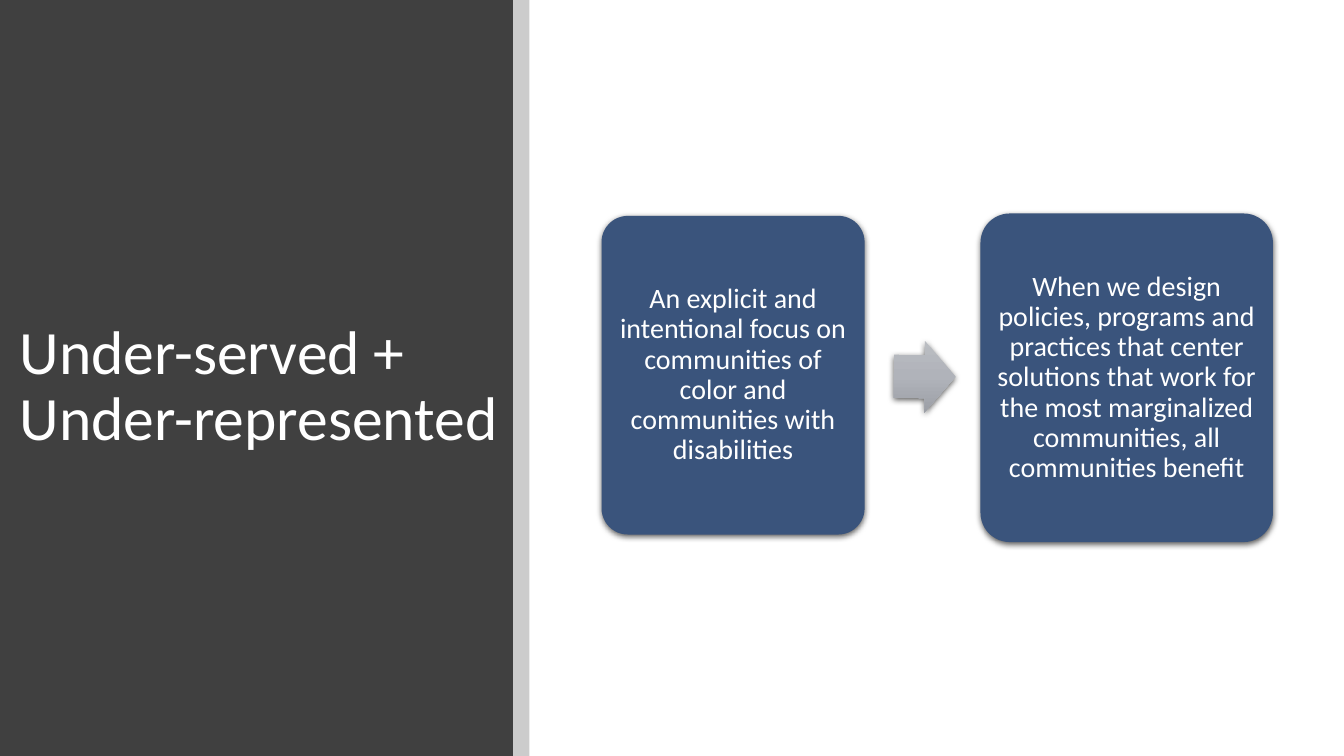
from dataclasses import dataclass

from pptx import Presentation
from pptx.dml.color import RGBColor
from pptx.enum.shapes import MSO_SHAPE as Preset
from pptx.enum.text import MSO_ANCHOR as Anchor, PP_ALIGN as Align
from pptx.oxml import parse_xml
from pptx.oxml.ns import nsdecls, qn
from pptx.shapes.autoshape import Shape
from pptx.slide import Slide
from pptx.text.text import TextFrame
from pptx.util import Cm, Pt

FONT = "Calibri"
COLORS = {
    "panel": "404040",
    "black": "000000",
    "card": "3A547C",
    "text": "FFFFFF",
}
ARROW_STOPS = {0: "BABDC2", 50: "B0B3BA", 100: "9C9FA6"}
SLIDE_WIDTH, SLIDE_HEIGHT = 33.87, 19.05
PANEL_WIDTH, STRIP_WIDTH = 12.93, 0.41


@dataclass(frozen=True)
class Box:
    left: float
    top: float
    width: float
    height: float

    def lengths(self) -> list[Cm]:
        return [Cm(value) for value in (self.left, self.top, self.width, self.height)]


@dataclass(frozen=True)
class Card:
    box: Box
    text: str


CARDS = [
    Card(
        Box(15.16, 5.44, 6.63, 8.03),
        "An explicit and intentional focus on communities of color "
        "and communities with disabilities",
    ),
    Card(
        Box(24.71, 5.38, 7.37, 8.28),
        "When we design policies, programs and practices that center solutions "
        "that work for the most marginalized communities, all communities benefit",
    ),
]


def add_plain_shape(slide: Slide, preset: Preset, box: Box, color: str) -> Shape:
    shape = slide.shapes.add_shape(preset, *box.lengths())
    shape.fill.solid()
    shape.fill.fore_color.rgb = RGBColor.from_string(COLORS[color])
    shape.line.fill.background()
    shape.shadow.inherit = False
    return shape


def add_shadow(shape: Shape) -> None:
    effects = shape.element.spPr.find(qn("a:effectLst"))
    effects.append(parse_xml(
        f'<a:outerShdw {nsdecls("a")} blurRad="{Pt(4.5)}" dist="{Pt(1.5)}" '
        f'dir="5400000" rotWithShape="0"><a:srgbClr val="{COLORS["black"]}">'
        '<a:alpha val="63000"/></a:srgbClr></a:outerShdw>'
    ))


def set_gradient(shape: Shape, stops: dict[int, str]) -> None:
    shape.fill.gradient()
    shape.fill.gradient_angle = 270
    gradient = shape.element.spPr.find(qn("a:gradFill"))
    stop_xml = "".join(
        f'<a:gs pos="{position * 1000}"><a:srgbClr val="{color}"/></a:gs>'
        for position, color in stops.items()
    )
    gradient.replace(
        gradient.find(qn("a:gsLst")),
        parse_xml(f'<a:gsLst {nsdecls("a")}>{stop_xml}</a:gsLst>'),
    )


def write_text(frame: TextFrame, lines: list[str], size: int, align: Align) -> None:
    frame.word_wrap = True
    frame.vertical_anchor = Anchor.MIDDLE
    paragraph = frame.paragraphs[0]
    paragraph.alignment = align
    paragraph.line_spacing = 0.9
    for index, line in enumerate(lines):
        if index:
            paragraph.add_line_break()
        run = paragraph.add_run()
        run.text = line
        run.font.name = FONT
        run.font.size = Pt(size)
        run.font.color.rgb = RGBColor.from_string(COLORS["text"])


def add_side_panel(slide: Slide) -> None:
    add_plain_shape(slide, Preset.RECTANGLE, Box(0, 0, PANEL_WIDTH, SLIDE_HEIGHT), "panel")
    strip = add_plain_shape(
        slide, Preset.RECTANGLE, Box(PANEL_WIDTH, 0, STRIP_WIDTH, SLIDE_HEIGHT), "black"
    )
    strip_color = strip.element.spPr.find(qn("a:solidFill")).find(qn("a:srgbClr"))
    strip_color.append(parse_xml(f'<a:alpha {nsdecls("a")} val="20000"/>'))
    title = slide.shapes.add_textbox(*Box(0.25, 2.26, 15.39, 15.01).lengths())
    write_text(title.text_frame, ["Under-served + ", "Under-represented"], 44, Align.LEFT)


def add_card(slide: Slide, card: Card) -> None:
    shape = add_plain_shape(slide, Preset.ROUNDED_RECTANGLE, card.box, "card")
    shape.adjustments[0] = 0.1
    add_shadow(shape)
    frame = shape.text_frame
    frame.margin_left = frame.margin_right = Cm(0.2)
    frame.margin_top = frame.margin_bottom = Cm(0.2)
    write_text(frame, [card.text], 20, Align.CENTER)


def add_arrow(slide: Slide) -> None:
    arrow = add_plain_shape(slide, Preset.RIGHT_ARROW, Box(22.53, 8.59, 1.55, 1.8), "card")
    arrow.adjustments[0] = 0.6
    arrow.adjustments[1] = 0.5
    arrow.rotation = 0.4
    set_gradient(arrow, ARROW_STOPS)
    add_shadow(arrow)


def main() -> None:
    presentation = Presentation()
    presentation.slide_width = Cm(SLIDE_WIDTH)
    presentation.slide_height = Cm(SLIDE_HEIGHT)
    slide = presentation.slides.add_slide(presentation.slide_layouts[6])

    # Dark panel with the title
    add_side_panel(slide)

    # Two cards joined by an arrow
    first_card, second_card = CARDS
    add_card(slide, first_card)
    add_arrow(slide)
    add_card(slide, second_card)

    presentation.save("out.pptx")


if __name__ == "__main__":
    main()
